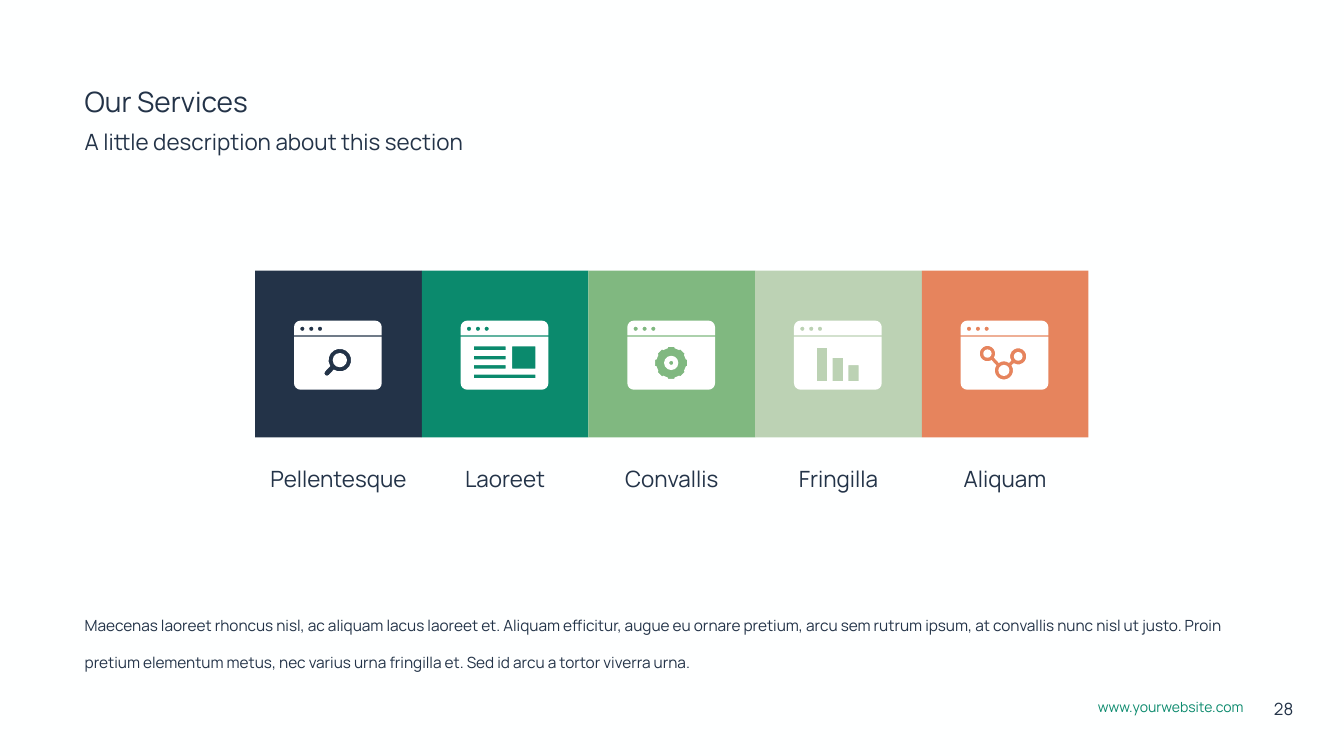
import math

import pptx
import pptx.dml.color
import pptx.enum.shapes
import pptx.enum.text
import pptx.util

Cm = pptx.util.Cm
RGB = pptx.dml.color.RGBColor
SHAPE = pptx.enum.shapes.MSO_SHAPE
ALIGN = pptx.enum.text.PP_ALIGN

PAPER = RGB(0xFE, 0xFF, 0xFF)
WHITE = RGB(0xFF, 0xFF, 0xFF)
NAVY = RGB(0x23, 0x33, 0x48)
TEAL = RGB(0x0B, 0x8A, 0x6D)
GREEN = RGB(0x80, 0xB8, 0x80)
SAGE = RGB(0xBC, 0xD2, 0xB4)
CORAL = RGB(0xE6, 0x84, 0x5D)

TILE = 8.4
WINDOW_WIDTH, WINDOW_HEIGHT = 4.42, 3.48
BAR_HEIGHT, BODY_TOP, CORNER = 0.74, 0.81, 0.33


def polar(x, y, radius, angle):
    """Return the point at an angle in degrees clockwise from the right."""
    return x + radius * math.cos(math.radians(angle)), y + radius * math.sin(math.radians(angle))


def arc(x, y, radius, start, end):
    """Return points along an arc, spaced more widely on tiny arcs."""
    steps = math.ceil((end - start) / (45 if radius < 0.2 else 22.5))
    return [polar(x, y, radius, start + (end - start) * i / steps) for i in range(steps + 1)]


def box(x, y, width, height):
    """Return the four corners of a rectangle."""
    return [(x, y), (x + width, y), (x + width, y + height), (x, y + height)]


def gear(x, y, teeth=8):
    """Return the outline of a gear wheel."""
    profile = ((-13, 0.76), (-11, 0.82), (11, 0.82), (13, 0.76))
    return [polar(x, y, radius, 360 * tooth / teeth + offset)
            for tooth in range(teeth) for offset, radius in profile]


MAGNIFIER = arc(2.31, 1.99, 0.57, 148, 482.6) + arc(1.66, 2.65, 0.13, 45, 225)
ARTICLE = [box(0.66, y, 1.6, 0.18) for y in (1.3, 1.77, 2.24)] + [
    box(0.66, 2.72, 3.1, 0.18), box(2.59, 1.3, 1.17, 1.12)]
BARS = [box(x, y, 0.52, 3.05 - y) for x, y in ((1.15, 1.37), (1.95, 1.88), (2.74, 2.24))]
NETWORK = (arc(1.35, 1.66, 0.39, 58, 392) + arc(2.18, 2.51, 0.46, 236, 304)
           + arc(2.9, 1.8, 0.41, 148, 482) + arc(2.18, 2.51, 0.46, 326, 574))

SERVICES = [
    ("Pellentesque", NAVY, [MAGNIFIER], [(SHAPE.OVAL, 2.31, 1.99, 0.36)]),
    ("Laoreet", TEAL, ARTICLE, []),
    ("Convallis", GREEN, [gear(2.21, 2.13)], [(SHAPE.DONUT, 2.21, 2.13, 0.36)]),
    ("Fringilla", SAGE, BARS, []),
    ("Aliquam", CORAL, [NETWORK], [
        (SHAPE.OVAL, 1.35, 1.66, 0.21), (SHAPE.OVAL, 2.18, 2.51, 0.28),
        (SHAPE.OVAL, 2.9, 1.8, 0.22)]),
]


def paint(shape, color):
    """Give a shape a plain fill with no line or shadow."""
    shape.fill.solid()
    shape.fill.fore_color.rgb = color
    shape.line.fill.background()
    shape.shadow.inherit = False


def write(shape, text, size, color=NAVY, inset=0, **paragraph_format):
    """Fill a text shape with one formatted paragraph."""
    frame = shape.text_frame
    frame_format = {"word_wrap": True, "auto_size": pptx.enum.text.MSO_AUTO_SIZE.NONE,
                    "vertical_anchor": pptx.enum.text.MSO_ANCHOR.TOP}
    for side in ("left", "right", "top", "bottom"):
        frame_format["margin_" + side] = Cm(inset)
    for name, value in frame_format.items():
        setattr(frame, name, value)
    paragraph = frame.paragraphs[0]
    for name, value in {"alignment": ALIGN.LEFT, **paragraph_format}.items():
        setattr(paragraph, name, value)
    run = paragraph.add_run()
    run.text = text
    for name, value in {"name": "Manrope", "size": pptx.util.Pt(size)}.items():
        setattr(run.font, name, value)
    run.font.color.rgb = color


def add_text(slide, left, top, width, height, *content, **formats):
    """Add a text box at the given place."""
    place = [Cm(value) for value in (left, top, width, height)]
    write(slide.shapes.add_textbox(*place), *content, **formats)


def add_outline(shapes, left, top, outlines):
    """Add one white freeform whose inner outlines are holes."""
    placed = [[(Cm(left + x), Cm(top + y)) for x, y in outline] for outline in outlines]
    builder = shapes.build_freeform(*placed[0][0])
    builder.add_line_segments(placed[0][1:], close=True)
    for hole in placed[1:]:
        builder.move_to(*hole[0])
        builder.add_line_segments(hole[1:], close=True)
    paint(builder.convert_to_shape(), WHITE)


def add_window(slide, left, top, holes, hubs):
    """Draw a browser window icon with its cut-out symbol."""
    shapes = slide.shapes.add_group_shape().shapes
    right, low = WINDOW_WIDTH - CORNER, WINDOW_HEIGHT - CORNER
    bar = (arc(CORNER, CORNER, CORNER, 180, 270) + arc(right, CORNER, CORNER, 270, 360)
           + [(WINDOW_WIDTH, BAR_HEIGHT), (0, BAR_HEIGHT)])
    body = ([(0, BODY_TOP), (WINDOW_WIDTH, BODY_TOP)]
            + arc(right, low, CORNER, 0, 90) + arc(CORNER, low, CORNER, 90, 180))
    buttons = [arc(x, 0.41, 0.11, 0, 360) for x in (0.42, 0.87, 1.31)]
    add_outline(shapes, left, top, [bar] + buttons)
    add_outline(shapes, left, top, [body] + holes)
    for kind, x, y, radius in hubs:
        hub = shapes.add_shape(kind, Cm(left + x - radius), Cm(top + y - radius),
                               Cm(2 * radius), Cm(2 * radius))
        if kind == SHAPE.DONUT:
            hub.adjustments[0] = 0.36
        paint(hub, WHITE)


def add_heading(slide, left, top):
    """Place the title and its subtitle."""
    title = slide.shapes.title
    for name, value in {"left": left, "top": top, "width": 16.3, "height": 1.7}.items():
        setattr(title, name, Cm(value))
    write(title, "Our Services", 40)
    add_text(slide, left, top + 2.24, 28, 1.37, "A little description about this section", 32)


def add_services(slide, left, top):
    """Lay out the row of coloured tiles with icons and labels."""
    for index, (label, color, holes, hubs) in enumerate(SERVICES):
        x = left + index * TILE
        tile = slide.shapes.add_shape(SHAPE.RECTANGLE, Cm(x), Cm(top), Cm(TILE), Cm(TILE))
        paint(tile, color)
        add_window(slide, x + 1.96, top + 2.52, holes, hubs)
        add_text(slide, x, top + 9.78, TILE, 1.37, label, 32, alignment=ALIGN.CENTER)


def add_footer(slide, left, top):
    """Place the web address and the page number."""
    add_text(slide, left, top, 8.59, 1.09, "www.yourwebsite.com", 20, TEAL, inset=0.2)
    add_text(slide, left + 8.87, top, 1.9, 1.07, "28", 24, inset=0.2)


def main():
    """Build and save the services slide."""
    deck = pptx.Presentation()
    deck.slide_width, deck.slide_height = Cm(67.74), Cm(38.1)
    slide = deck.slides.add_slide(deck.slide_layouts[5])
    slide.background.fill.solid()
    slide.background.fill.fore_color.rgb = PAPER
    add_footer(slide, 55.14, 34.99)
    add_services(slide, 12.86, 13.64)
    add_text(slide, 4.27, 30.1, 59.21, 3.76,
             "Maecenas laoreet rhoncus nisl, ac aliquam lacus laoreet et. Aliquam efficitur, "
             "augue eu ornare pretium, arcu sem rutrum ipsum, at convallis nunc nisl ut justo. "
             "Proin pretium elementum metus, nec varius urna fringilla et. "
             "Sed id arcu a tortor viverra urna.", 22, line_spacing=2.0)
    add_heading(slide, 4.27, 4.24)
    deck.save("out.pptx")


if __name__ == "__main__":
    main()
